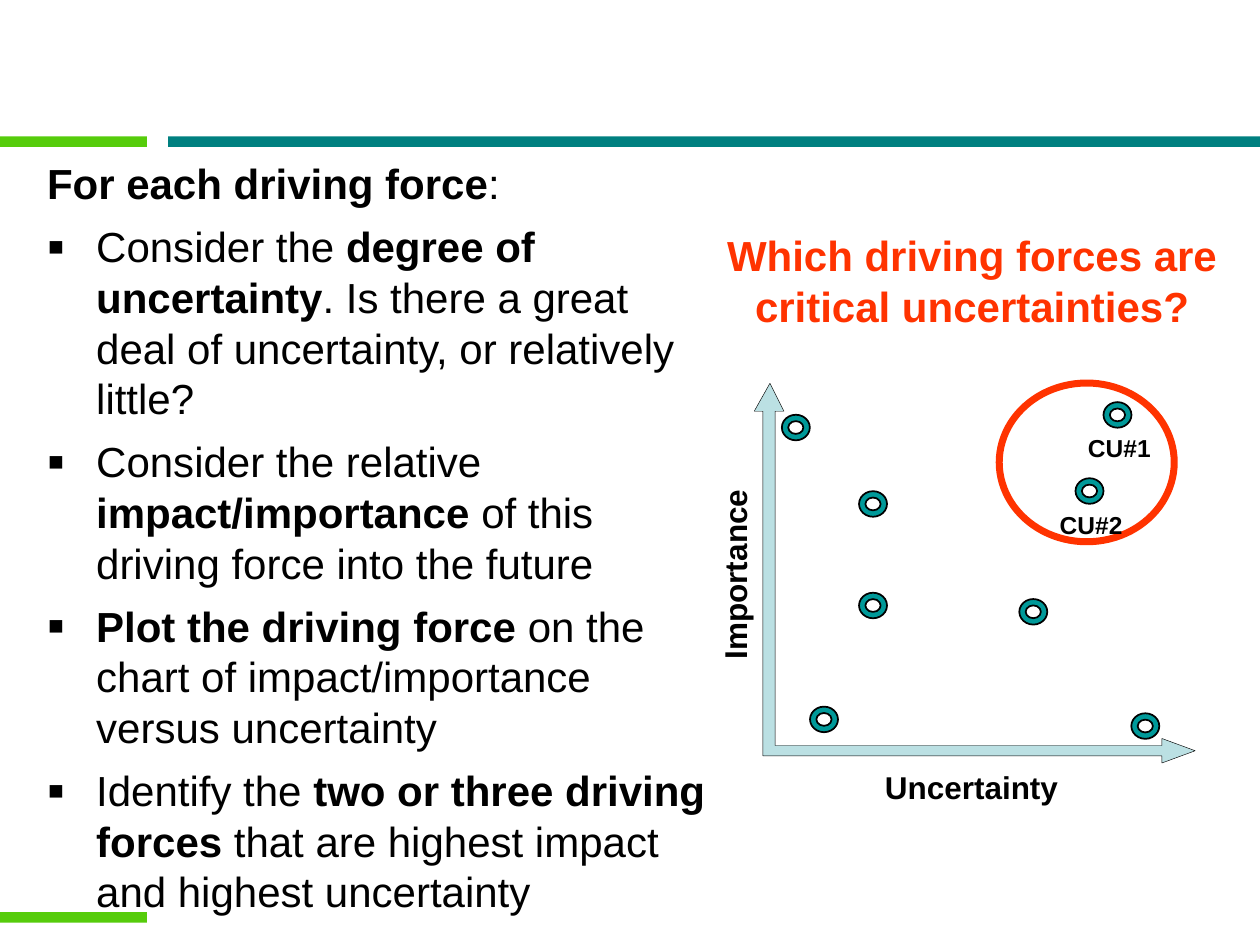
from lxml import etree
from pptx import Presentation
from pptx.dml.color import RGBColor
from pptx.enum.shapes import MSO_SHAPE
from pptx.enum.text import MSO_ANCHOR, PP_ALIGN
from pptx.oxml.ns import qn
from pptx.util import Pt

RECT, OVAL, DONUT = MSO_SHAPE.RECTANGLE, MSO_SHAPE.OVAL, MSO_SHAPE.DONUT
TOP = MSO_ANCHOR.TOP
LEFT, CENTER = PP_ALIGN.LEFT, PP_ALIGN.CENTER

FONT = "Arial"
BLACK, TEAL, GREEN, RED = "000000", "008080", "56CC0B", "FF3300"
AXIS_FILL, MARKER_FILL = "BBE0E3", "009999"
LINE_PITCH = Pt(28.9)
BODY_INDENT = Pt(28.1)

BARS = [
    (96, 78, 624, 6, TEAL),
    (0, 78, 84, 6, GREEN),
    (0, 521.3, 84, 6, GREEN),
]
STEPS = [
    [("For each driving force", True), (":", False)],
    [("Consider the ", False), ("degree of uncertainty", True),
     (". Is there a great deal of uncertainty, or relatively little?", False)],
    [("Consider the relative ", False), ("impact/importance", True),
     (" of this driving force into the future", False)],
    [("Plot the driving force", True),
     (" on the chart of impact/importance versus uncertainty", False)],
    [("Identify the ", False), ("two or three driving forces", True),
     (" that are highest impact and highest uncertainty", False)],
]
AXES = [
    (439.6, 218.9), (448.1, 234.9), (443.2, 234.9), (443.2, 425.9),
    (664, 425.9), (664, 421.7), (682.6, 429.1), (664, 436.4),
    (664, 432.2), (436, 432.2), (436, 234.9), (431, 234.9),
]
MARKER_CENTERS = [
    (498.9, 288), (498.9, 346), (622.6, 280.6), (470.9, 411.1),
    (454.8, 244.3), (654.5, 414.9), (590.5, 349.6), (638.6, 237.1),
]
LABELS = [
    ("Importance", 339.1, 313.9, 161.3, 28.8, 18, CENTER, 270),
    ("Uncertainty", 445.7, 435.6, 218.9, 28.8, 18, CENTER, 0),
    ("CU#2", 598.5, 287.8, 69.8, 23.8, 14, LEFT, 0),
    ("CU#1", 614.6, 243.8, 68.4, 23.8, 14, LEFT, 0),
]


def rgb(color):
    """Return the colour of a hex string."""
    return RGBColor.from_string(color)


def place(sp, x, y, w, h):
    """Set the position and size of a shape in points."""
    sp.left, sp.top, sp.width, sp.height = Pt(x), Pt(y), Pt(w), Pt(h)


def style_shape(sp, fill=None, line=None, width=1):
    """Set fill and line, or switch each off, and drop the shadow."""
    sp.shadow.inherit = False
    if fill:
        sp.fill.solid()
        sp.fill.fore_color.rgb = rgb(fill)
    else:
        sp.fill.background()
    if line:
        sp.line.color.rgb = rgb(line)
        sp.line.width = Pt(width)
    else:
        sp.line.fill.background()


def style_run(r, size, color=BLACK, bold=True):
    """Format the font of a run."""
    r.font.name = FONT
    r.font.size = Pt(size)
    r.font.bold = bold
    r.font.color.rgb = rgb(color)


def add_preset(s, kind, x, y, w, h, **look):
    """Add a styled preset shape."""
    sp = s.shapes.add_shape(kind, Pt(x), Pt(y), Pt(w), Pt(h))
    style_shape(sp, **look)
    return sp


def add_title(s, text):
    """Move and format the title placeholder."""
    sp = s.shapes.title
    place(sp, 391, 126, 329, 108)
    tf = sp.text_frame
    tf.text = text
    tf.word_wrap = True
    tf.vertical_anchor = TOP
    tf.margin_top = Pt(5)
    p = tf.paragraphs[0]
    p.alignment = CENTER
    p.line_spacing = LINE_PITCH
    style_run(p.runs[0], 24, RED)


def set_indent(p, bullet):
    """Give a paragraph its hanging indent and optional square bullet."""
    pPr = p._p.get_or_add_pPr()
    pPr.set("marL", str(BODY_INDENT))
    pPr.set("indent", str(-BODY_INDENT))
    if bullet:
        etree.SubElement(pPr, qn("a:buSzPct"), val="120000")
        etree.SubElement(pPr, qn("a:buFont"), typeface=FONT)
        etree.SubElement(pPr, qn("a:buChar"), char="▪")
    else:
        etree.SubElement(pPr, qn("a:buNone"))


def add_steps(s):
    """Add the heading and the bulleted steps."""
    tf = s.shapes.add_textbox(Pt(19.8), Pt(85), Pt(391), Pt(440)).text_frame
    tf.word_wrap = True
    tf.margin_top = tf.margin_right = Pt(5)
    for i, parts in enumerate(STEPS):
        p = tf.paragraphs[0] if i == 0 else tf.add_paragraph()
        set_indent(p, bullet=i > 0)
        p.line_spacing = LINE_PITCH
        p.space_after = Pt(7.2)
        for text, bold in parts:
            r = p.add_run()
            r.text = text
            style_run(r, 24, bold=bold)


def add_axes(s):
    """Add the two joined axis arrows as one outline."""
    builder = s.shapes.build_freeform(*AXES[0], scale=Pt(1))
    builder.add_line_segments(AXES[1:], close=True)
    style_shape(builder.convert_to_shape(), AXIS_FILL, BLACK, 0.25)


def add_marker(s, cx, cy):
    """Add a ring centred on a point of the chart."""
    w, h = 16, 14.6
    sp = add_preset(s, DONUT, cx - w / 2, cy - h / 2, w, h,
                    fill=MARKER_FILL, line=BLACK)
    sp.adjustments[0] = 0.25


def add_label(s, text, x, y, w, h, size, align, rotation):
    """Add a bold one-line label."""
    sp = s.shapes.add_textbox(Pt(x), Pt(y), Pt(w), Pt(h))
    sp.rotation = rotation
    tf = sp.text_frame
    tf.word_wrap = True
    tf.text = text
    p = tf.paragraphs[0]
    p.alignment = align
    style_run(p.runs[0], size)


def main():
    """Build the slide and save it."""
    prs = Presentation()
    prs.slide_width, prs.slide_height = Pt(720), Pt(540)
    s = prs.slides.add_slide(prs.slide_layouts[5])
    for x, y, w, h, color in BARS:
        add_preset(s, RECT, x, y, w, h, fill=color)
    add_title(s, "Which driving forces are critical uncertainties?")
    add_steps(s)
    add_axes(s)
    for cx, cy in MARKER_CENTERS:
        add_marker(s, cx, cy)
    add_preset(s, OVAL, 571, 218.9, 100, 90.7, line=RED, width=4)
    for label in LABELS:
        add_label(s, *label)
    prs.save("out.pptx")


if __name__ == "__main__":
    main()
